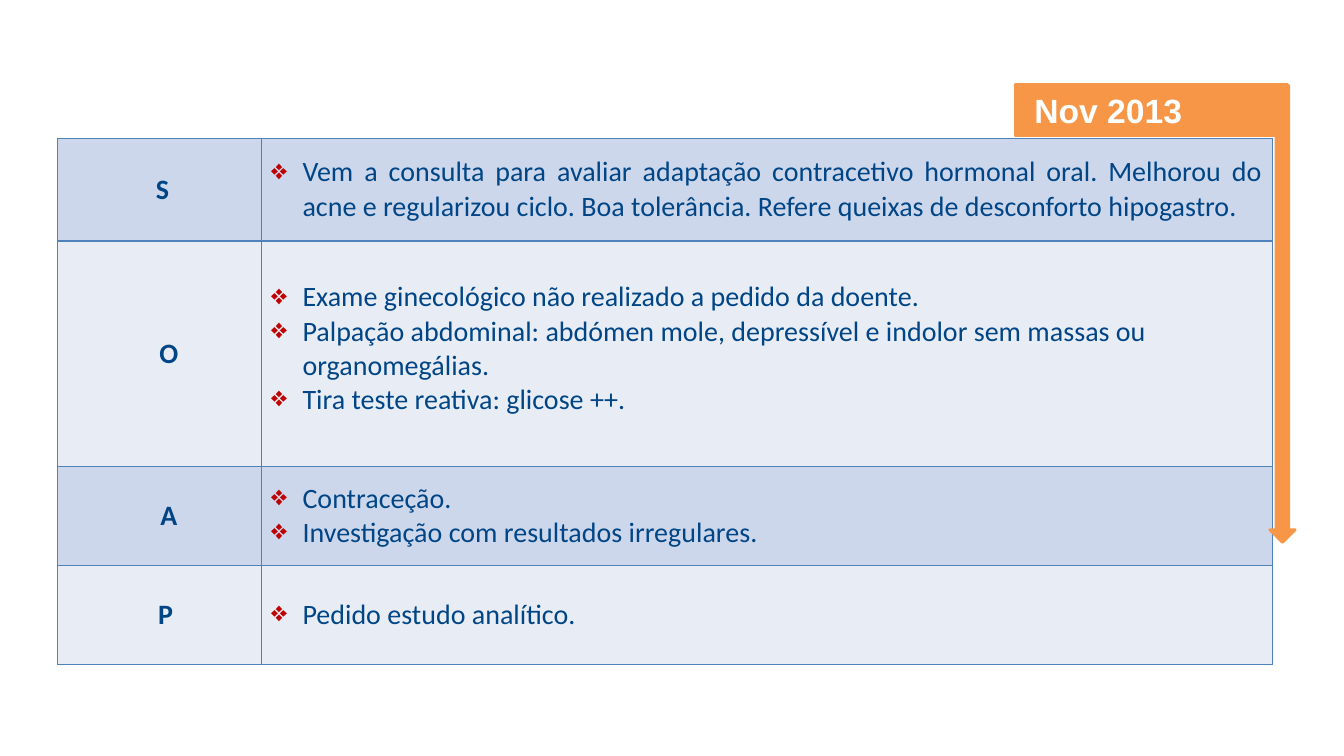
from dataclasses import dataclass

from lxml.etree import SubElement
from pptx import Presentation
from pptx.dml.color import RGBColor
from pptx.enum.shapes import MSO_SHAPE
from pptx.enum.text import MSO_ANCHOR, PP_ALIGN
from pptx.oxml.ns import qn
from pptx.util import Cm, Pt

NAVY = RGBColor(0x00, 0x45, 0x86)
RED = RGBColor(0xC0, 0x00, 0x00)
BLUE = RGBColor(0x4F, 0x81, 0xBD)
ORANGE = RGBColor(0xF7, 0x96, 0x46)
WHITE = RGBColor(0xFF, 0xFF, 0xFF)
BANDS = (RGBColor(0xCD, 0xD7, 0xEB), RGBColor(0xE8, 0xEC, 0xF5))

LETTER_FORMAT = {"name": "Calibri", "size": Pt(20), "bold": True}
NOTE_FORMAT = {"name": "Calibri", "size": Pt(20), "bold": False}
DATE_FORMAT = {"name": "Arial", "size": Pt(24), "bold": True}

COLUMN_WIDTHS = (Cm(5.13), Cm(25.48))
HANGING_INDENT = Cm(0.79)


@dataclass
class SoapRow:
    letter: str
    notes: list[str]
    height: float
    letter_margin: float
    alignment: PP_ALIGN = PP_ALIGN.LEFT
    bottom_margin: float = 0.13


SOAP_ROWS = [
    SoapRow("S", ["Vem a consulta para avaliar adaptação contracetivo hormonal oral. "
                  "Melhorou do acne e regularizou ciclo. Boa tolerância. "
                  "Refere queixas de desconforto hipogastro."],
            2.59, 0.41, PP_ALIGN.JUSTIFY),
    SoapRow("O", ["Exame ginecológico não realizado a pedido da doente.",
                  "Palpação abdominal: abdómen mole, depressível e indolor "
                  "sem massas ou organomegálias.",
                  "Tira teste reativa: glicose ++."],
            5.69, 0.73, bottom_margin=0.38),
    SoapRow("A", ["Contraceção.", "Investigação com resultados irregulares."],
            2.49, 0.73),
    SoapRow("P", ["Pedido estudo analítico."], 2.49, 0.57),
]


def apply_font(paragraph, text: str, font_format: dict, color: RGBColor) -> None:
    run = paragraph.add_run()
    run.text = text
    for name, value in font_format.items():
        setattr(run.font, name, value)
    run.font.color.rgb = color


def add_bullet(paragraph) -> None:
    """Give the paragraph a hanging red diamond bullet."""
    properties = paragraph._p.get_or_add_pPr()
    properties.set("marL", str(HANGING_INDENT))
    properties.set("indent", str(-HANGING_INDENT))
    color = SubElement(properties, qn("a:buClr"))
    SubElement(color, qn("a:srgbClr"), val=str(RED))
    SubElement(properties, qn("a:buChar"), char="❖")


def style_cell(cell, fill: RGBColor, row_index: int) -> None:
    """Set borders, fill and anchor; a thicker rule lies under the first row."""
    widths = {"L": 1, "R": 1, "T": 2 if row_index == 1 else 1,
              "B": 2 if row_index == 0 else 1}
    properties = cell._tc.get_or_add_tcPr()
    for side, width in widths.items():
        border = SubElement(properties, qn(f"a:ln{side}"), w=str(Pt(width)))
        border_fill = SubElement(border, qn("a:solidFill"))
        SubElement(border_fill, qn("a:srgbClr"), val=str(BLUE))
    cell.fill.solid()
    cell.fill.fore_color.rgb = fill
    cell.vertical_anchor = MSO_ANCHOR.MIDDLE


def add_soap_table(slide) -> None:
    height = Cm(sum(row.height for row in SOAP_ROWS))
    table = slide.shapes.add_table(len(SOAP_ROWS), len(COLUMN_WIDTHS), Cm(1.45),
                                   Cm(3.48), sum(COLUMN_WIDTHS), height).table
    for column, width in zip(table.columns, COLUMN_WIDTHS):
        column.width = width
    for index, row in enumerate(SOAP_ROWS):
        table.rows[index].height = Cm(row.height)
        letter_cell, notes_cell = table.cell(index, 0), table.cell(index, 1)
        for cell in (letter_cell, notes_cell):
            style_cell(cell, BANDS[index % 2], index)

        letter_cell.margin_left = Cm(row.letter_margin)
        paragraph = letter_cell.text_frame.paragraphs[0]
        paragraph.alignment = PP_ALIGN.CENTER
        apply_font(paragraph, row.letter, LETTER_FORMAT, NAVY)

        notes_cell.margin_bottom = Cm(row.bottom_margin)
        frame = notes_cell.text_frame
        for position, note in enumerate(row.notes):
            paragraph = frame.add_paragraph() if position else frame.paragraphs[0]
            paragraph.alignment = row.alignment
            add_bullet(paragraph)
            apply_font(paragraph, note, NOTE_FORMAT, NAVY)


def add_orange_shape(slide, kind: MSO_SHAPE, left: float, top: float,
                     width: float, height: float):
    shape = slide.shapes.add_shape(kind, Cm(left), Cm(top), Cm(width), Cm(height))
    shape.shadow.inherit = False
    shape.fill.solid()
    shape.fill.fore_color.rgb = ORANGE
    shape.line.color.rgb = ORANGE
    shape.line.width = Pt(2)
    return shape


def add_date_marker(slide) -> None:
    label = add_orange_shape(slide, MSO_SHAPE.RECTANGLE, 25.58, 2.13, 6.86, 1.3)
    frame = label.text_frame
    frame.word_wrap = True
    frame.vertical_anchor = MSO_ANCHOR.TOP
    frame.margin_left = Cm(0.49)
    paragraph = frame.paragraphs[0]
    paragraph.alignment = PP_ALIGN.LEFT
    apply_font(paragraph, "Nov 2013", DATE_FORMAT, WHITE)
    add_orange_shape(slide, MSO_SHAPE.DOWN_ARROW, 32, 2.16, 0.64, 11.51)


def main() -> None:
    presentation = Presentation()
    presentation.slide_width = Cm(33.87)
    presentation.slide_height = Cm(19.05)
    slide = presentation.slides.add_slide(presentation.slide_layouts[6])
    add_soap_table(slide)
    add_date_marker(slide)
    presentation.save("out.pptx")


if __name__ == "__main__":
    main()
